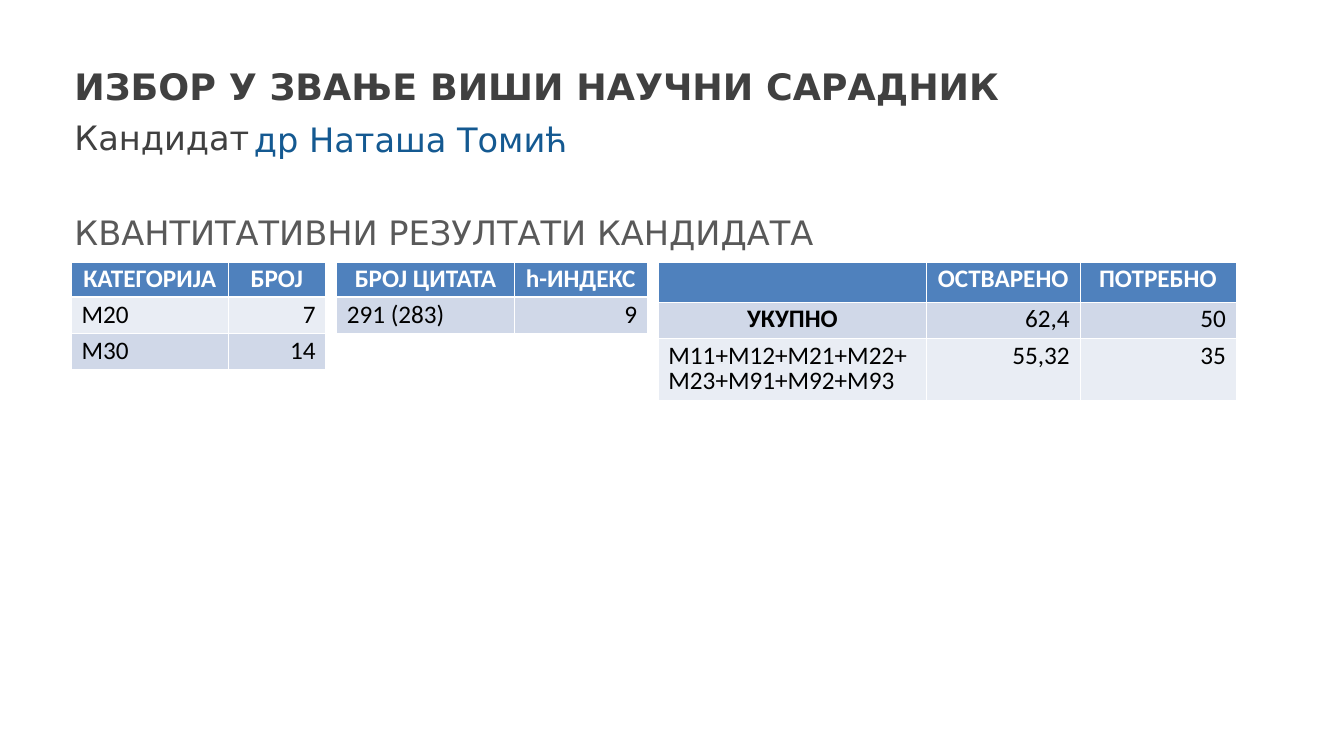
from lxml.etree import SubElement
from pptx import Presentation
from pptx.dml.color import RGBColor
from pptx.enum.text import MSO_ANCHOR, PP_ALIGN
from pptx.oxml.ns import qn
from pptx.util import Inches, Pt

COLUMN = ROW = Inches(0.01)
SLIDE_COLUMNS, SLIDE_ROWS = 1333, 750
LEFT, WIDTH = 64, 1206
TABLE_LEFT, TABLE_TOP, TABLE_GAP = 71, 260, 11

WHITE = RGBColor(0xFF, 0xFF, 0xFF)
BLACK = RGBColor(0x00, 0x00, 0x00)
DARK = RGBColor(0x40, 0x40, 0x40)
GREY = RGBColor(0x59, 0x59, 0x59)
NAVY = RGBColor(0x14, 0x59, 0x91)
HEADER_BLUE = RGBColor(0x4F, 0x81, 0xBD)
BAND_DARK = RGBColor(0xD0, 0xD8, 0xE8)
BAND_LIGHT = RGBColor(0xE9, 0xED, 0xF4)

TOTAL = "УКУПНО"
TABLES = [
    {"rows": [["КАТЕГОРИЈА", "БРОЈ"], ["М20", "7"], ["М30", "14"]],
     "widths": [155, 97], "heights": [35, 36, 35],
     "bands": [BAND_LIGHT, BAND_DARK], "anchor": MSO_ANCHOR.MIDDLE},
    {"rows": [["БРОЈ ЦИТАТА", "h-ИНДЕКС"], ["291 (283)", "9"]],
     "widths": [176, 132], "heights": [35, 36],
     "bands": [BAND_DARK], "anchor": MSO_ANCHOR.MIDDLE},
    {"rows": [["", "ОСТВАРЕНО", "ПОТРЕБНО"], [TOTAL, "62,4", "50"],
              ["М11+М12+М21+M22+M23+M91+M92+M93", "55,32", "35"]],
     "widths": [266, 152, 155], "heights": [40, 36, 61],
     "bands": [BAND_DARK, BAND_LIGHT], "anchor": MSO_ANCHOR.TOP},
]


def write(frame, text, size=24, font="DejaVu Sans", color=DARK, bold=False,
          align=PP_ALIGN.LEFT, line_spacing=1.0):
    paragraph = frame.paragraphs[0]
    paragraph.alignment = align
    paragraph.line_spacing = line_spacing
    paragraph.font.size = Pt(size)
    if text:
        run = paragraph.add_run()
        run.text = text
        run.font.size = Pt(size)
        run.font.name = font
        run.font.bold = bold
        run.font.color.rgb = color


def add_text(slide, box, text, anchor=MSO_ANCHOR.BOTTOM, **style):
    left, top, width, height = box
    shape = slide.shapes.add_textbox(left * COLUMN, top * ROW, width * COLUMN, height * ROW)
    frame = shape.text_frame
    frame.word_wrap = True
    frame.vertical_anchor = anchor
    write(frame, text, **style)


def add_headings(slide, left, width):
    add_text(slide, (left, 54, width, 58), "ИЗБОР У ЗВАЊЕ ВИШИ НАУЧНИ САРАДНИК",
             size=26, bold=True)
    add_text(slide, (left, 111, width, 50), "Кандидат", anchor=MSO_ANCHOR.TOP)
    add_text(slide, (left + 178, 112, 675, 48), "др Наташа Томић",
             anchor=MSO_ANCHOR.MIDDLE, color=NAVY, line_spacing=1.1)
    add_text(slide, (left, 197, width, 58), "КВАНТИТАТИВНИ РЕЗУЛТАТИ КАНДИДАТА", color=GREY)


def set_borders(cell, heavy_side):
    properties = cell._tc.get_or_add_tcPr()
    for position, side in enumerate(("lnL", "lnR", "lnT", "lnB")):
        width = Pt(1.47) if side == heavy_side else Pt(0.45)
        line = properties.makeelement(qn(f"a:{side}"), {"w": str(int(width))})
        fill = SubElement(line, qn("a:solidFill"))
        SubElement(fill, qn("a:srgbClr"), val=str(WHITE))
        properties.insert(position, line)


def add_result_table(slide, left, top, rows, widths, heights, bands, anchor):
    frame = slide.shapes.add_table(len(rows), len(widths), left * COLUMN, top * ROW,
                                   sum(widths) * COLUMN, sum(heights) * ROW)
    table = frame.table
    for column, width in zip(table.columns, widths):
        column.width = width * COLUMN
    for row, height in zip(table.rows, heights):
        row.height = height * ROW
    fills = [HEADER_BLUE] + bands
    heavy_sides = {0: "lnB", 1: "lnT"}
    for row_index, texts in enumerate(rows):
        for column_index, text in enumerate(texts):
            cell = table.cell(row_index, column_index)
            header = row_index == 0
            emphasis = header or text == TOTAL
            align = PP_ALIGN.RIGHT if column_index else PP_ALIGN.LEFT
            cell.fill.solid()
            cell.fill.fore_color.rgb = fills[row_index]
            cell.vertical_anchor = anchor
            write(cell.text_frame, text, size=18, font="Calibri",
                  color=WHITE if header else BLACK, bold=emphasis,
                  align=PP_ALIGN.CENTER if emphasis else align, line_spacing=0.83)
            set_borders(cell, heavy_sides.get(row_index))


def add_results(slide, left, top, gap):
    for table in TABLES:
        add_result_table(slide, left, top, **table)
        left += sum(table["widths"]) + gap


def main():
    presentation = Presentation()
    presentation.slide_width = SLIDE_COLUMNS * COLUMN
    presentation.slide_height = SLIDE_ROWS * ROW
    slide = presentation.slides.add_slide(presentation.slide_layouts[6])
    add_headings(slide, LEFT, WIDTH)
    add_results(slide, TABLE_LEFT, TABLE_TOP, TABLE_GAP)
    presentation.save("out.pptx")


if __name__ == "__main__":
    main()
